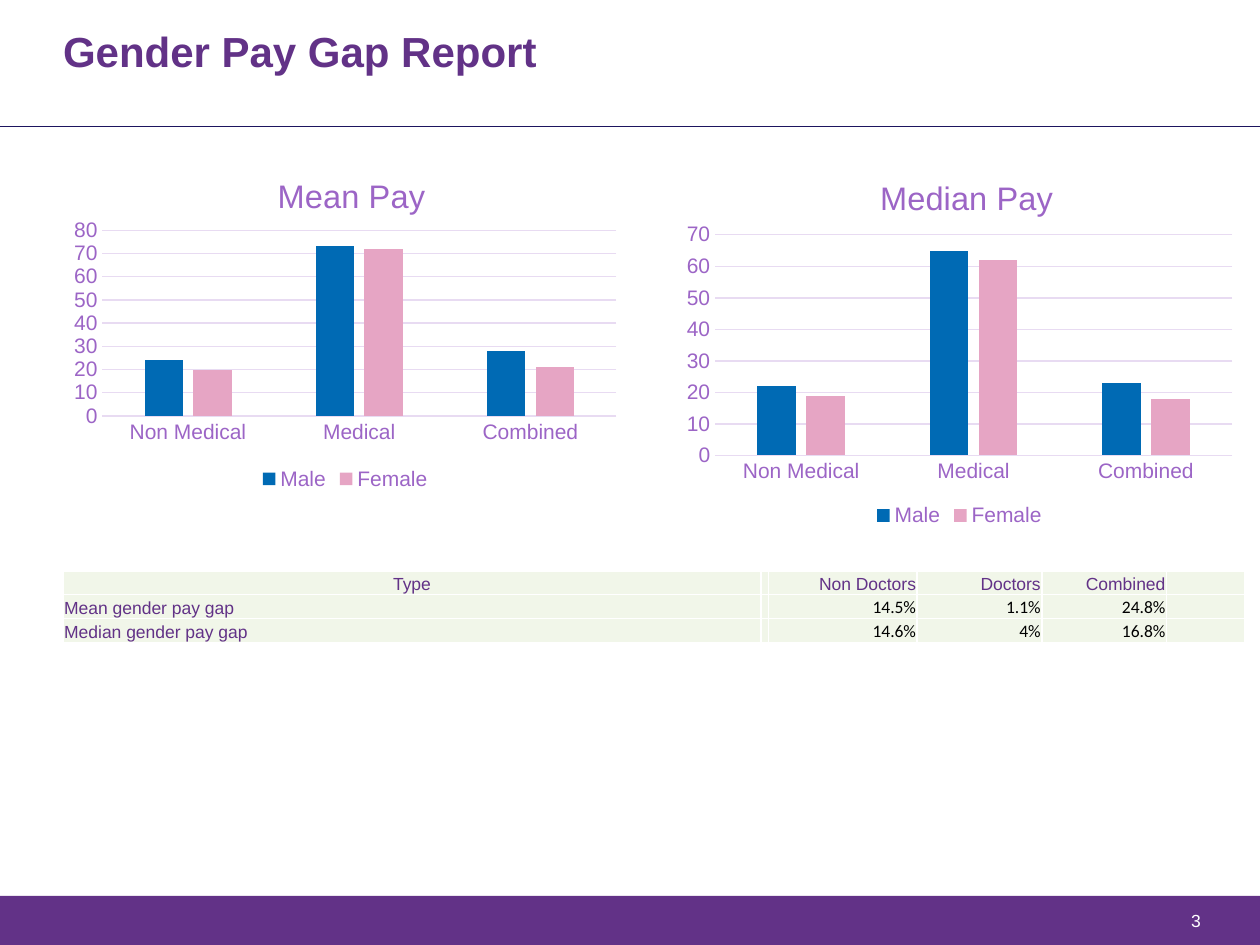
from lxml import etree
from pptx import Presentation
from pptx.chart.data import CategoryChartData
from pptx.dml.color import RGBColor
from pptx.enum.chart import XL_CHART_TYPE, XL_LEGEND_POSITION, XL_TICK_MARK
from pptx.enum.shapes import MSO_CONNECTOR, MSO_SHAPE
from pptx.enum.text import MSO_ANCHOR, MSO_AUTO_SIZE, PP_ALIGN
from pptx.oxml import parse_xml
from pptx.oxml.ns import nsdecls, qn
from pptx.util import Inches, Pt

COLUMNS = XL_CHART_TYPE.COLUMN_CLUSTERED
LEGEND_BOTTOM = XL_LEGEND_POSITION.BOTTOM
NO_TICK = XL_TICK_MARK.NONE
LEFT, CENTER, RIGHT = PP_ALIGN.LEFT, PP_ALIGN.CENTER, PP_ALIGN.RIGHT
BOTTOM, MIDDLE = MSO_ANCHOR.BOTTOM, MSO_ANCHOR.MIDDLE

COLORS = {
    "purple": "623287", "lilac": "9C65C6", "grid": "E8DBF2", "rule": "1D155F",
    "male": "006AB4", "female": "E6A5C4", "cell": "F1F6E9",
    "white": "FFFFFF", "black": "000000",
}
CATEGORIES = ["Non Medical", "Medical", "Combined"]
TABLE_ROWS = [
    ["Type", "", "Non Doctors", "Doctors", "Combined", ""],
    ["Mean gender pay gap", "", "14.5%", "1.1%", "24.8%", ""],
    ["Median gender pay gap", "", "14.6%", "4%", "16.8%", ""],
]
COLUMN_WIDTHS = [5.54, 0.04, 1.18, 0.99, 0.99, 0.62]
ROW_HEIGHT = 0.19


def color(name):
    return RGBColor.from_string(COLORS[name])


def inches(box):
    return [Inches(length) for length in box]


def format_font(font, size, color_name, name="Arial", bold=False):
    font.size = Pt(size)
    font.name = name
    font.bold = bold
    font.color.rgb = color(color_name)


def write_text(text_frame, text, align=LEFT, line_spacing=None, **font_format):
    paragraph = text_frame.paragraphs[0]
    paragraph.alignment = align
    paragraph.line_spacing = line_spacing
    run = paragraph.add_run()
    run.text = text
    format_font(run.font, **font_format)


def clear_margins(text_frame):
    text_frame.margin_left = text_frame.margin_right = 0
    text_frame.margin_top = text_frame.margin_bottom = 0


def add_title(slide, box, text):
    title = slide.shapes.title
    title.left, title.top, title.width, title.height = inches(box)
    text_frame = title.text_frame
    clear_margins(text_frame)
    text_frame.auto_size = MSO_AUTO_SIZE.NONE
    text_frame.vertical_anchor = MIDDLE
    write_text(text_frame, text, line_spacing=0.9, size=24, color_name="purple", bold=True)


def add_rule(slide, top, width):
    rule = slide.shapes.add_connector(
        MSO_CONNECTOR.STRAIGHT, 0, Inches(top), Inches(width), Inches(top))
    rule.line.color.rgb = color("rule")
    rule.line.width = Pt(0.25)
    etree.SubElement(rule._element.spPr, qn("a:effectLst"))


def add_footer(slide, box, number):
    left, top, width, height = box
    band = slide.shapes.add_shape(MSO_SHAPE.RECTANGLE, *inches(box))
    band.shadow.inherit = False
    band.fill.solid()
    band.fill.fore_color.rgb = color("purple")
    band.line.fill.background()
    number_box = slide.shapes.add_textbox(
        *inches((left + width - 0.74, top + 0.11, 0.27, 0.23)))
    clear_margins(number_box.text_frame)
    number_box.text_frame.word_wrap = True
    write_text(number_box.text_frame, number, align=RIGHT, size=10, color_name="white")


def manual_layout(x, y, width=None, height=None):
    """Layout in fractions of the chart; a size applies to the inner plot area."""
    values = [("xMode", "edge"), ("yMode", "edge"), ("x", x), ("y", y)]
    if width is not None:
        values = [("layoutTarget", "inner"), *values, ("w", width), ("h", height)]
    parts = "".join(f'<c:{tag} val="{value}"/>' for tag, value in values)
    return parse_xml(
        f'<c:layout {nsdecls("c")}><c:manualLayout>{parts}</c:manualLayout></c:layout>')


def set_layout(parent, layout, position):
    for old in parent.findall(qn("c:layout")):
        parent.remove(old)
    parent.insert(position, layout)


def add_pay_chart(slide, box, title, male, female, maximum, title_at, plot_box):
    data = CategoryChartData()
    data.categories = CATEGORIES
    data.add_series("Male", male)
    data.add_series("Female", female)
    chart = slide.shapes.add_chart(COLUMNS, *inches(box), data).chart
    format_font(chart.font, 10, "purple")

    chart.has_title = True
    write_text(chart.chart_title.text_frame, title, align=CENTER, size=18.6, color_name="lilac")
    chart.chart_title.include_in_layout = False
    set_layout(chart.chart_title._element, manual_layout(*title_at), 1)
    set_layout(chart._chartSpace.chart.plotArea, manual_layout(*plot_box), 0)

    chart.has_legend = True
    chart.legend.position = LEGEND_BOTTOM
    chart.legend.include_in_layout = False
    format_font(chart.legend.font, 12, "lilac")

    for axis in (chart.category_axis, chart.value_axis):
        axis.major_tick_mark = axis.minor_tick_mark = NO_TICK
        format_font(axis.tick_labels.font, 12, "lilac")
    value_axis = chart.value_axis
    value_axis.minimum_scale, value_axis.maximum_scale = 0, maximum
    value_axis.major_unit = 10
    value_axis.format.line.fill.background()
    for line in (chart.category_axis.format.line, value_axis.major_gridlines.format.line):
        line.color.rgb = color("grid")
        line.width = Pt(0.75)

    plot = chart.plots[0]
    plot.gap_width, plot.overlap = 219, -27
    plot.vary_by_categories = False
    for series, color_name in zip(plot.series, ("male", "female")):
        series.format.fill.solid()
        series.format.fill.fore_color.rgb = color(color_name)


def format_cell(cell):
    cell.margin_left = cell.margin_right = cell.margin_top = Inches(0.01)
    cell.margin_bottom = 0
    cell.vertical_anchor = BOTTOM
    cell.fill.solid()
    cell.fill.fore_color.rgb = color("cell")
    properties = cell._tc.get_or_add_tcPr()
    for position, side in enumerate(("lnL", "lnR", "lnT", "lnB")):
        properties.insert(position, parse_xml(
            f'<a:{side} {nsdecls("a")} w="{Pt(1)}"><a:solidFill>'
            f'<a:srgbClr val="{COLORS["white"]}"/></a:solidFill></a:{side}>'))


def add_gap_table(slide, left, top):
    table = slide.shapes.add_table(
        len(TABLE_ROWS), len(COLUMN_WIDTHS),
        *inches((left, top, sum(COLUMN_WIDTHS), ROW_HEIGHT * len(TABLE_ROWS)))).table
    for column, width in zip(table.columns, COLUMN_WIDTHS):
        column.width = Inches(width)
    for row_index, texts in enumerate(TABLE_ROWS):
        table.rows[row_index].height = Inches(ROW_HEIGHT)
        for column_index, text in enumerate(texts):
            cell = table.cell(row_index, column_index)
            format_cell(cell)
            if not text:
                end = etree.SubElement(
                    cell.text_frame.paragraphs[0]._p, qn("a:endParaRPr"))
                end.set("sz", "1000")
                continue
            is_value = row_index > 0 and column_index > 0
            align = RIGHT if column_index else LEFT if row_index else CENTER
            write_text(cell.text_frame, text, align=align, size=10,
                       name="Calibri" if is_value else "Arial",
                       color_name="black" if is_value else "purple")


def main():
    presentation = Presentation()
    presentation.slide_width, presentation.slide_height = Inches(10), Inches(7.5)
    slide = presentation.slides.add_slide(presentation.slide_layouts[5])
    add_footer(slide, (0, 7.11, 10, 0.39), "3")
    add_rule(slide, 1, 10)
    add_title(slide, (0.5, 0.26, 3.93, 0.34), "Gender Pay Gap Report")
    add_pay_chart(slide, (0.5, 1.2, 4.48, 2.73), "Mean Pay", (24, 73, 28), (20, 72, 21),
                  80, title_at=(0.37, 0.05), plot_box=(0.07, 0.23, 0.91, 0.54))
    add_pay_chart(slide, (5.36, 1.2, 4.51, 3.02), "Median Pay", (22, 65, 23), (19, 62, 18),
                  70, title_at=(0.35, 0.05), plot_box=(0.07, 0.22, 0.91, 0.58))
    add_gap_table(slide, 0.5, 4.53)
    presentation.save("out.pptx")


if __name__ == "__main__":
    main()
